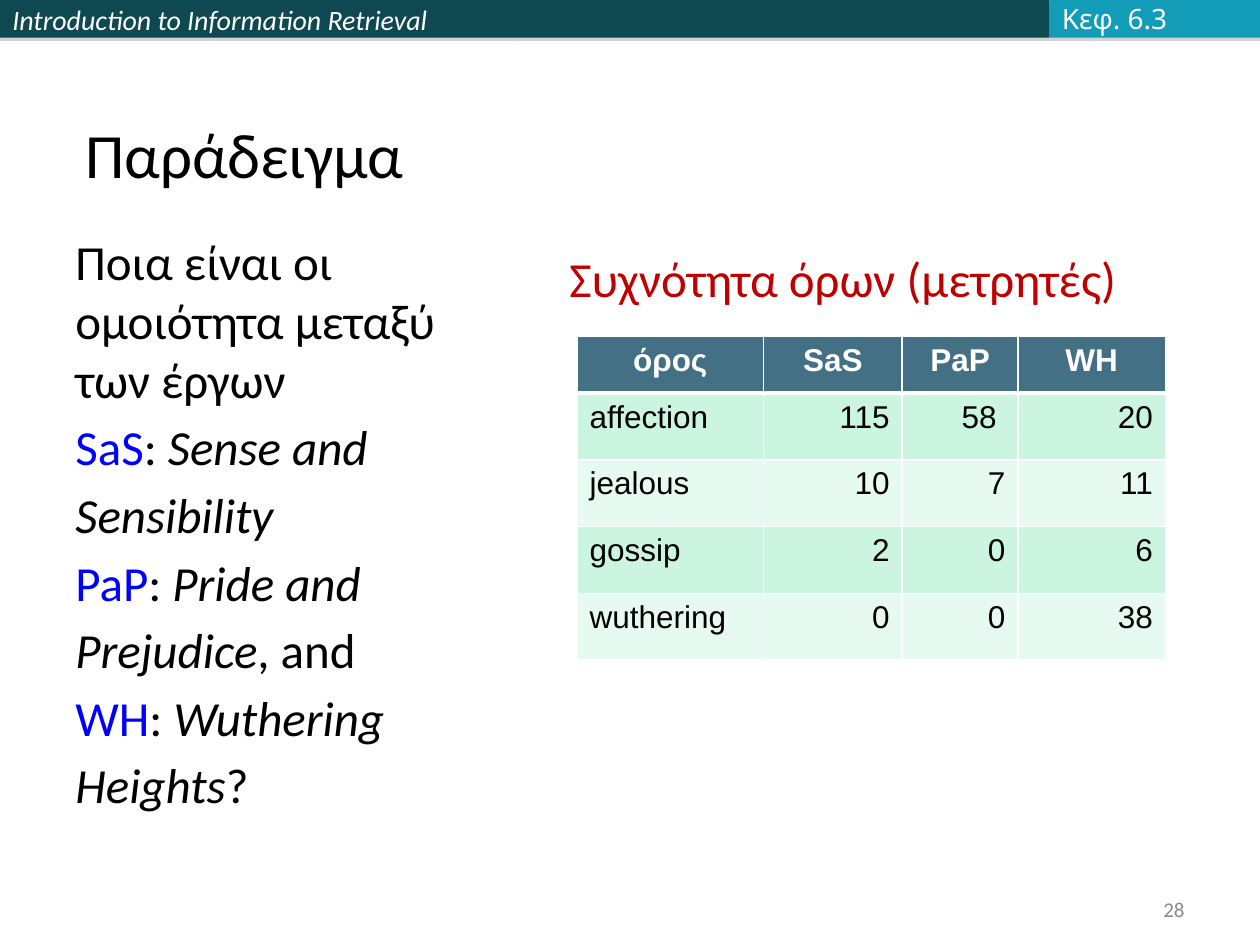
from lxml import etree
from pptx import Presentation
from pptx.dml.color import RGBColor
from pptx.enum import shapes, text
from pptx.oxml import ns
from pptx.util import Inches, Pt


def color(hex_code):
    return RGBColor.from_string(hex_code)


def write(paragraph, pieces, size, font="Calibri"):
    for words, hex_code, italic in pieces:
        run = paragraph.add_run()
        run.text = words
        run.font.size = Pt(size)
        run.font.name = font
        run.font.italic = italic
        run.font.color.rgb = color(hex_code)


prs = Presentation()
prs.slide_width, prs.slide_height = Inches(10), Inches(7.5)
slide = prs.slides.add_slide(prs.slide_layouts[6])

left = 0
for width, fill, label in [
    (4.08, "0E4851", "Introduction to Information Retrieval"),
    (4.25, "0E4851", ""),
    (1.67, "139CB7", ""),
]:
    band = slide.shapes.add_shape(
        shapes.MSO_SHAPE.RECTANGLE, Inches(left), 0, Inches(width), Inches(0.3))
    band.fill.solid()
    band.fill.fore_color.rgb = color(fill)
    band.line.fill.background()
    band.shadow.inherit = False
    effects = band._element.spPr.find(ns.qn("a:effectLst"))
    shadow = etree.SubElement(
        effects, ns.qn("a:outerShdw"), dist=str(Pt(1.8)), dir="5400000", rotWithShape="0")
    tint = etree.SubElement(shadow, ns.qn("a:srgbClr"), val="808080")
    etree.SubElement(tint, ns.qn("a:alpha"), val="35000")
    if label:
        band.text_frame.vertical_anchor = text.MSO_ANCHOR.MIDDLE
        course = band.text_frame.paragraphs[0]
        course.alignment = text.PP_ALIGN.LEFT
        write(course, [(label, "FFFFFF", True)], 16)
    left += width

top, middle, bottom = text.MSO_ANCHOR.TOP, text.MSO_ANCHOR.MIDDLE, text.MSO_ANCHOR.BOTTOM
to_left, to_right = text.PP_ALIGN.LEFT, text.PP_ALIGN.RIGHT
for box, words, size, font, hex_code, anchor, align, wrap in [
    ((0.58, 0.3, 9.42, 1.27), "Παράδειγμα", 36, "Calibri", "000000", bottom, to_left, True),
    ((4.42, 1.92, 5.33, 0.57), "Συχνότητα όρων (μετρητές)", 28, "Calibri", "C00000", top, to_left, True),
    ((8.33, -0.04, 1.1, 0.37), "Κεφ. 6.3", 16, "Noto Sans", "FBFCFF", middle, to_left, False),
    ((7.17, 7.08, 2.33, 0.27), "28", 12, "Calibri", "898989", middle, to_right, True),
]:
    frame = slide.shapes.add_textbox(*map(Inches, box)).text_frame
    frame.word_wrap = wrap
    frame.vertical_anchor = anchor
    frame.paragraphs[0].alignment = align
    write(frame.paragraphs[0], [(words, hex_code, False)], size, font)

question = slide.shapes.add_textbox(
    Inches(0.5), Inches(1.79), Inches(3.29), Inches(5.13)).text_frame
question.word_wrap = True
write(question.paragraphs[0],
      [("Ποια είναι οι ομοιότητα μεταξύ των έργων", "000000", False)], 28)
for short, title_start, title_end, ending in [
    ("SaS", "Sense and", "Sensibility", ""),
    ("PaP", "Pride and", "Prejudice", ", and"),
    ("WH", "Wuthering", "Heights", "?"),
]:
    first_line = [(short, "0000FF", False), (": ", "000000", False), (title_start, "000000", True)]
    second_line = [(title_end, "000000", True)]
    if ending:
        second_line.append((ending, "000000", False))
    for pieces in (first_line, second_line):
        line = question.add_paragraph()
        line.space_before = Pt(5)
        write(line, pieces, 28)

counts = [
    ("όρος", "SaS", "PaP", "WH"),
    ("affection", "115", "58 ", "20"),
    ("jealous", "10", "7", "11"),
    ("gossip", "2", "0", "6"),
    ("wuthering", "0", "0", "38"),
]
table = slide.shapes.add_table(
    5, 4, Inches(4.58), Inches(2.67), Inches(4.67), Inches(2.57)).table
for column, width in zip(table.columns, (1.48, 1.1, 0.92, 1.17)):
    column.width = Inches(width)
for r, values in enumerate(counts):
    table.rows[r].height = Inches(0.53 if r else 0.45)
    for c, value in enumerate(values):
        cell = table.cell(r, c)
        borders = {"L": 1, "R": 1, "T": 3 if r == 1 else 1, "B": 1 if r else 3}
        for side, weight in borders.items():
            edge = etree.SubElement(
                cell._tc.get_or_add_tcPr(), ns.qn("a:ln" + side), w=str(Pt(weight)))
            solid = etree.SubElement(edge, ns.qn("a:solidFill"))
            etree.SubElement(solid, ns.qn("a:srgbClr"), val="FFFFFF")
        cell.fill.solid()
        cell.fill.fore_color.rgb = color(
            "437085" if r == 0 else "CBF5E1" if r % 2 else "E7FAF1")
        entry = cell.text_frame.paragraphs[0]
        entry.alignment = text.PP_ALIGN.CENTER if r == 0 else to_right if c else to_left
        write(entry, [(value, "000000" if r else "FFFFFF", False)], 18, "Arial")
        entry.runs[0].font.bold = r == 0

prs.save("out.pptx")
